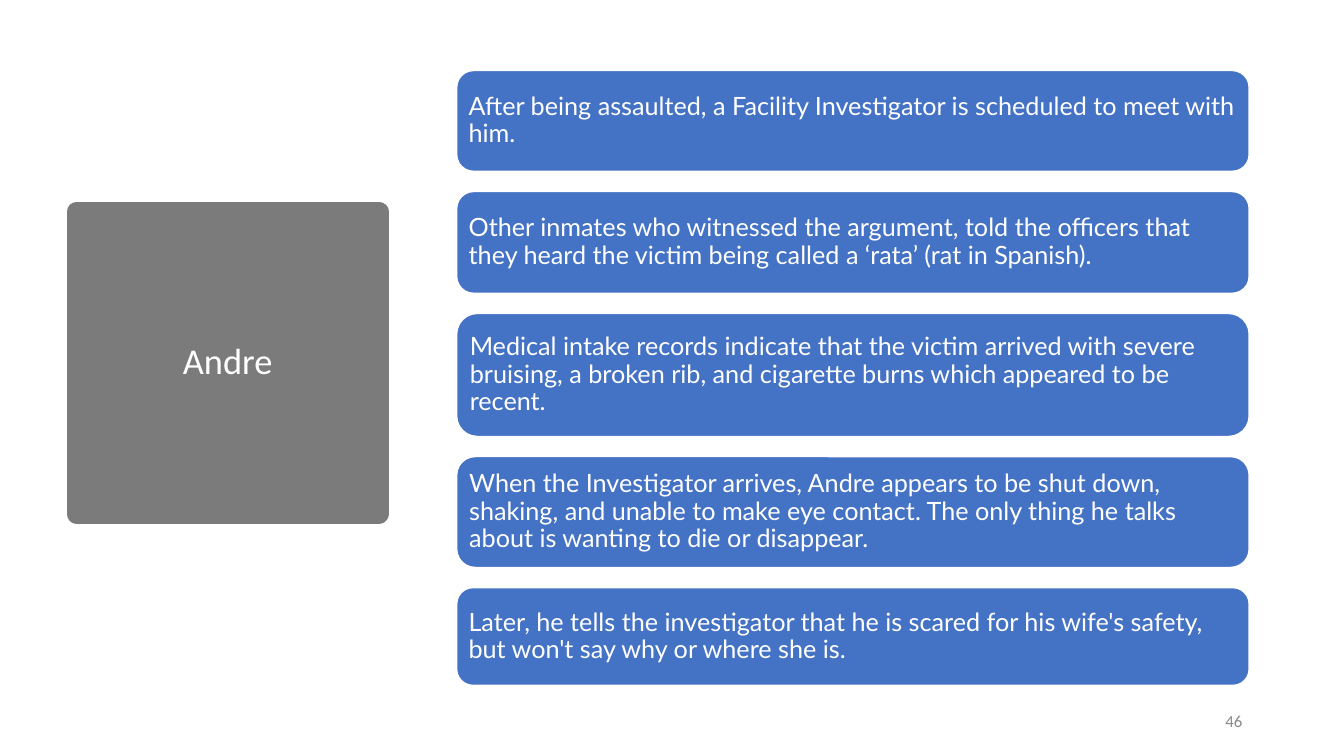
from lxml import etree
from pptx import Presentation
from pptx import util as u
from pptx.dml.color import RGBColor
from pptx.enum import shapes, text
from pptx.oxml.ns import qn

COLORS = {"white": "FFFFFF", "gray": "7B7B7B", "blue": "4472C4", "number": "898989"}

EVENTS = [
    (1.0, "After being assaulted, a Facility Investigator is scheduled to meet with him."),
    (1.01, "Other inmates who witnessed the argument, told the officers that they heard "
           "the victim being called a ‘rata’ (rat in Spanish)."),
    (1.22, "Medical intake records indicate that the victim arrived with severe bruising, "
           "a broken rib, and cigarette burns which appeared to be recent."),
    (1.1, "When the Investigator arrives, Andre appears to be shut down, shaking, and unable "
          "to make eye contact. The only thing he talks about is wanting to die or disappear."),
    (0.97, "Later, he tells the investigator that he is scared for his wife's safety, "
           "but won't say why or where she is."),
]
EVENTS_TOP, EVENTS_GAP = 0.7, 0.2


def rgb(name):
    return RGBColor.from_string(COLORS[name])


class SlideBuilder:
    def __init__(self, prs):
        self.s = prs.slides.add_slide(prs.slide_layouts[6])
        self.title_style = {"name": "Calibri", "size": u.Pt(26)}
        self.event_style = {"name": "Lato", "size": u.Pt(18)}
        self.number_style = {"name": "Calibri", "size": u.Pt(12)}

    def label(self, sp, words, style, color, align, spacing=1.0, inset=None):
        tf = sp.text_frame
        tf.word_wrap = True
        tf.vertical_anchor = text.MSO_ANCHOR.MIDDLE
        if inset is not None:
            for side in ("left", "top", "right", "bottom"):
                setattr(tf, f"margin_{side}", u.Inches(inset))
        p = tf.paragraphs[0]
        p.alignment = align
        p.line_spacing = spacing
        r = p.add_run()
        r.text = words
        for key, value in style.items():
            setattr(r.font, key, value)
        r.font.color.rgb = rgb(color)

    def box(self, kind, at, fill, line, width):
        sp = self.s.shapes.add_shape(kind, *map(u.Inches, at))
        sp.shadow.inherit = False
        sp.fill.solid()
        sp.fill.fore_color.rgb = rgb(fill)
        sp.line.color.rgb = rgb(line)
        sp.line.width = u.Pt(width)
        etree.SubElement(sp._element.spPr.find(qn("a:ln")), qn("a:round"))
        return sp

    def title(self, words):
        sp = self.box(shapes.MSO_SHAPE.RECTANGLE, (0.76, 2.1, 3, 3), "gray", "gray", 13.75)
        self.label(sp, words, self.title_style, "white", text.PP_ALIGN.CENTER, 0.9)

    def event(self, top, height, words):
        at = (4.53, top, 7.86, height)
        sp = self.box(shapes.MSO_SHAPE.ROUNDED_RECTANGLE, at, "blue", "white", 1)
        self.label(sp, words, self.event_style, "white", text.PP_ALIGN.LEFT, 0.9, 0.07)

    def number(self, words):
        sp = self.s.shapes.add_textbox(*map(u.Inches, (9.42, 6.95, 3, 0.4)))
        self.label(sp, words, self.number_style, "number", text.PP_ALIGN.RIGHT)


def main():
    prs = Presentation()
    prs.slide_width, prs.slide_height = u.Inches(13.33), u.Inches(7.5)
    builder = SlideBuilder(prs)
    builder.title("Andre")
    top = EVENTS_TOP
    for height, words in EVENTS:
        builder.event(top, height, words)
        top += height + EVENTS_GAP
    builder.number("46")
    prs.save("out.pptx")


if __name__ == "__main__":
    main()
